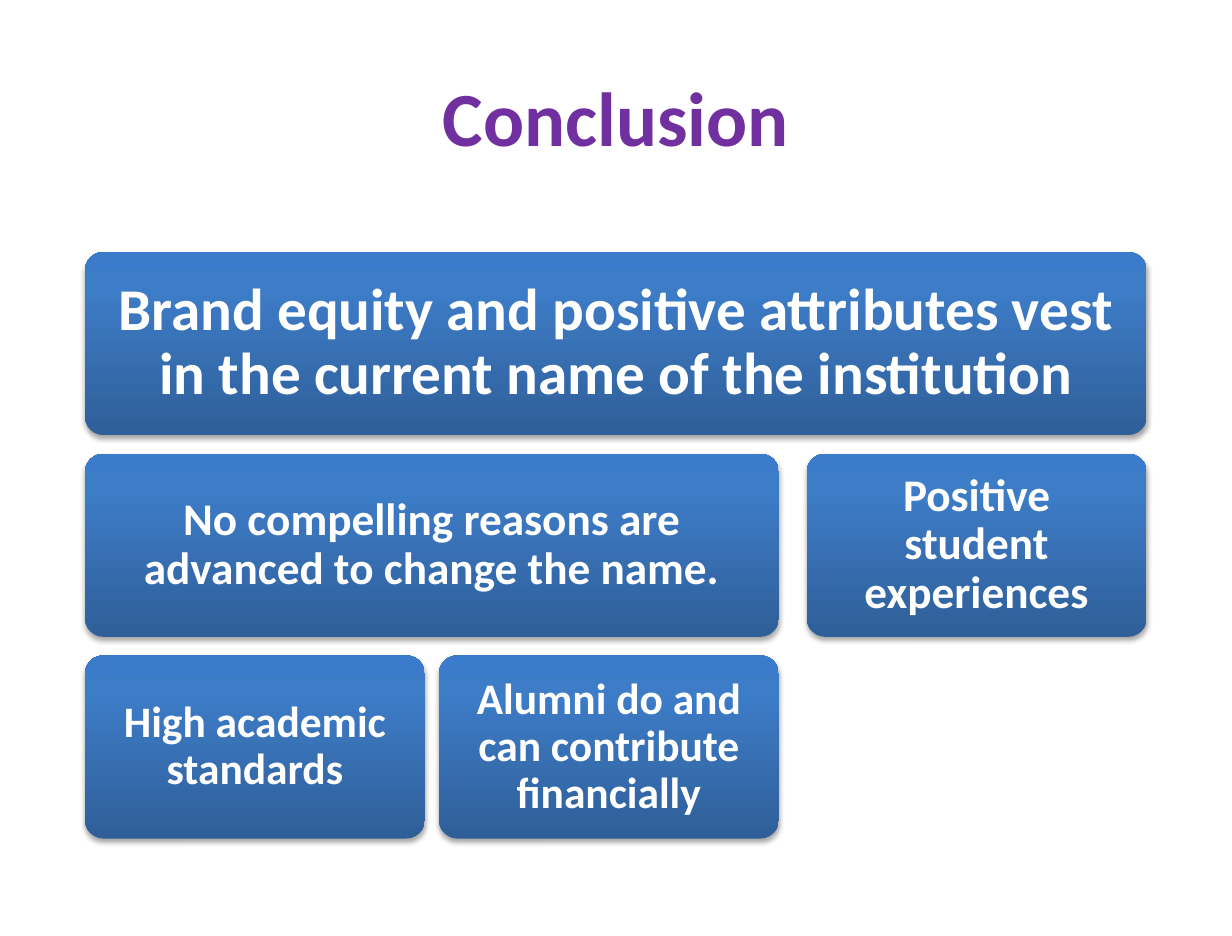
from lxml.etree import SubElement
from pptx import Presentation
from pptx.dml.color import RGBColor
from pptx.enum.shapes import MSO_SHAPE as Shape
from pptx.enum.text import MSO_ANCHOR as Anchor, PP_ALIGN as Align
from pptx.oxml.ns import qn
from pptx.util import Pt

COLORS = {
    "title": "7030A0", "text": "FFFFFF", "shadow": "000000",
    "low": "2F5F99", "mid": "3D7CC7", "high": "3A7CCB",
}
LEFT, TOP = 48.8, 144.8
HIGH, STEP = 105.2, 115.9
SMALL, GAP, WIDE = 195.3, 8.1, 16
PAIR = 2 * SMALL + GAP
FULL = PAIR + WIDE + SMALL


def style(frame, size, color):
    frame.word_wrap = True
    frame.vertical_anchor = Anchor.MIDDLE
    para = frame.paragraphs[0]
    para.alignment = Align.CENTER
    font = para.runs[0].font
    font.name, font.size, font.bold = "Calibri", Pt(size), True
    font.color.rgb = RGBColor.from_string(COLORS[color])


def paint(box):
    """Give the box its three-stop gradient and soft shadow."""
    box.line.fill.background()
    box.shadow.inherit = False
    box.fill.gradient()
    box.fill.gradient_angle = 90
    props = box._element.spPr
    stops = props.find(".//" + qn("a:gsLst"))
    for stop in list(stops):
        stops.remove(stop)
    for pos, name in ((0, "low"), (80, "mid"), (100, "high")):
        stop = SubElement(stops, qn("a:gs"), pos=str(pos * 1000))
        SubElement(stop, qn("a:srgbClr"), val=COLORS[name])
    shade = SubElement(props.find(qn("a:effectLst")), qn("a:outerShdw"),
                       blurRad=str(Pt(3.1)), dist=str(Pt(1.8)),
                       dir="5400000", rotWithShape="0")
    tint = SubElement(shade, qn("a:srgbClr"), val=COLORS["shadow"])
    SubElement(tint, qn("a:alpha"), val="35000")


deck = Presentation()
deck.slide_width, deck.slide_height = Pt(707.8), Pt(537.8)
slide = deck.slides.add_slide(deck.slide_layouts[5])

title = slide.shapes.title
title.left, title.top = Pt(35.3), Pt(21.6)
title.width, title.height = Pt(637.2), Pt(90)
title.text_frame.text = "Conclusion"
style(title.text_frame, 44, "title")

# Row, offset from the left edge, width, text size, inset, text
boxes = [
    (0, 0, FULL, 34, 10,
     "Brand equity and positive attributes vest in the current name of the institution"),
    (1, 0, PAIR, 26, 8, "No compelling reasons are advanced to change the name."),
    (2, 0, SMALL, 25, 7.5, "High academic standards"),
    (2, SMALL + GAP, SMALL, 25, 7.5, "Alumni do and can contribute financially"),
    (1, PAIR + WIDE, SMALL, 26, 8, "Positive student experiences"),
]
for row, shift, width, size, inset, text in boxes:
    box = slide.shapes.add_shape(Shape.ROUNDED_RECTANGLE, Pt(LEFT + shift),
                                 Pt(TOP + row * STEP), Pt(width), Pt(HIGH))
    box.adjustments[0] = 0.1
    paint(box)
    frame = box.text_frame
    frame.text = text
    frame.margin_left = frame.margin_right = Pt(inset)
    frame.margin_top = frame.margin_bottom = Pt(inset)
    frame.paragraphs[0].line_spacing = 0.9
    style(frame, size, "text")

deck.save("out.pptx")
